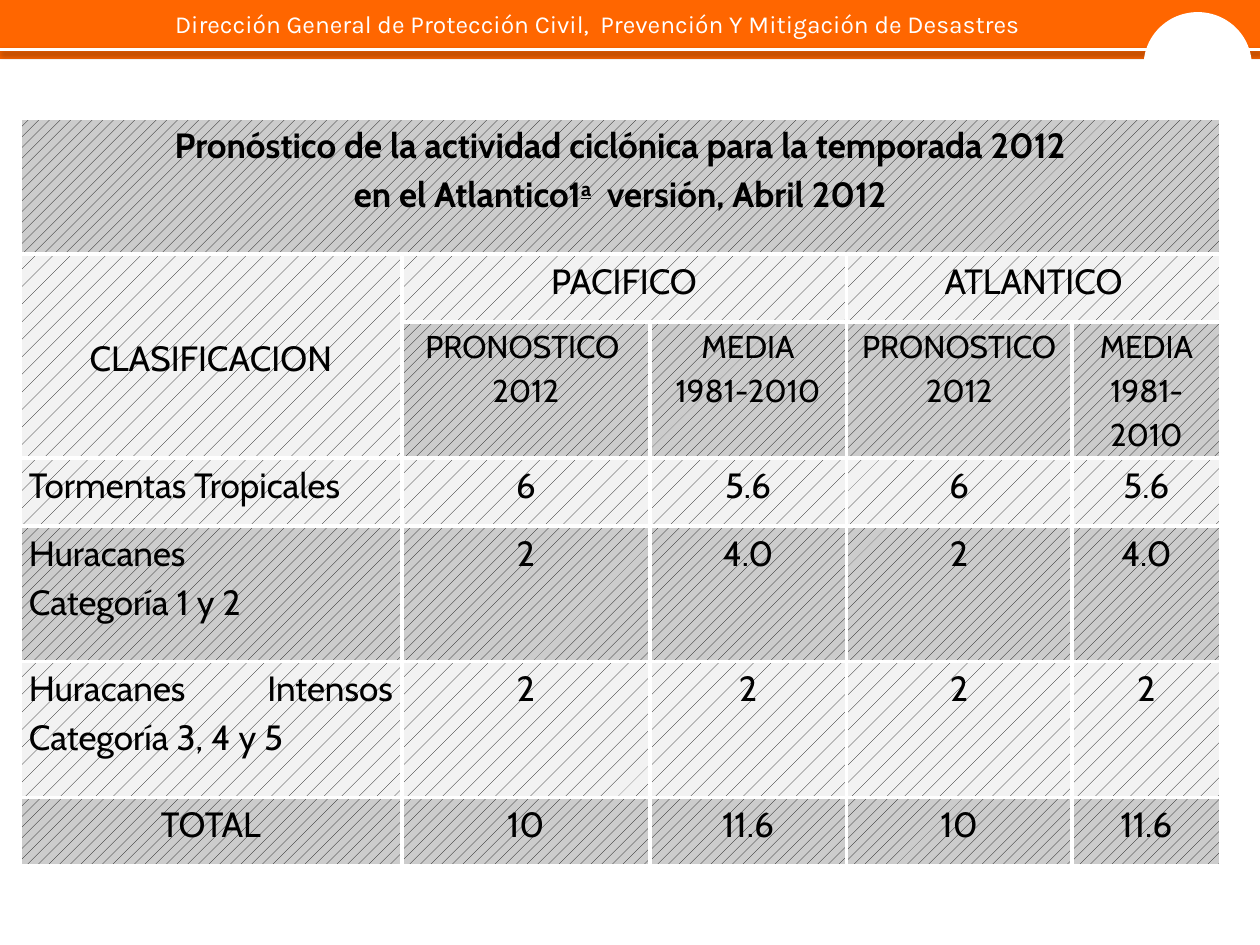
import pptx
import pptx.dml.color
import pptx.enum.dml
import pptx.enum.shapes
import pptx.enum.text
import pptx.oxml
import pptx.oxml.ns
import pptx.util

Cm = pptx.util.Cm
Pt = pptx.util.Pt
ALIGN = pptx.enum.text.PP_ALIGN
PATTERN = pptx.enum.dml.MSO_PATTERN
SHAPE = pptx.enum.shapes.MSO_SHAPE

HEADING = "Dirección General de Protección Civil,  Prevención Y Mitigación de Desastres"
TITLE = [
    "Pronóstico de la actividad ciclónica para la temporada 2012\ven el Atlantico1",
    "a",
    "  versión, Abril 2012",
]
ROWS = [
    [None] * 5,
    ["CLASIFICACION", "PACIFICO", None, "ATLANTICO", None],
    [None, "PRONOSTICO \n2012", "MEDIA\n1981-2010", "PRONOSTICO\n2012", "MEDIA\n1981-2010"],
    ["Tormentas Tropicales", "6", "5.6", "6", "5.6"],
    ["Huracanes \nCategoría 1 y 2", "2", "4.0", "2", "4.0"],
    ["Huracanes Intensos Categoría 3, 4 y 5", "2", "2", "2", "2"],
    ["TOTAL", "10", "11.6", "10", "11.6"],
]
COLUMN_WIDTHS = [7.7, 5, 3.96, 4.55, 3]
ROW_HEIGHTS = [2.74, 1.37, 2.74, 1.37, 2.74, 2.74, 1.37]
MERGES = [((0, 0), (0, 4)), ((1, 0), (2, 0)), ((1, 1), (1, 2)), ((1, 3), (1, 4))]
SUBHEADING_ROW = 2
JUSTIFIED_ROWS = (3, 4, 5)


def color(value):
    return pptx.dml.color.RGBColor.from_string(value)


def set_font(font, name, size, value, bold=False):
    font.name = name
    font.size = Pt(size)
    font.color.rgb = color(value)
    font.bold = bold


def add_plain_shape(slide, kind, box, fill):
    shape = slide.shapes.add_shape(kind, *map(Cm, box))
    shape.shadow.inherit = False
    shape.fill.solid()
    shape.fill.fore_color.rgb = color(fill)
    shape.line.fill.background()
    return shape


def add_shadow(connector):
    connector._element.spPr.append(pptx.oxml.parse_xml(
        f'<a:effectLst {pptx.oxml.ns.nsdecls("a")}>'
        f'<a:outerShdw blurRad="{Pt(3.1)}" dist="{Pt(1.6)}" dir="5400000" rotWithShape="0">'
        '<a:srgbClr val="000000"><a:alpha val="38000"/></a:srgbClr>'
        '</a:outerShdw></a:effectLst>'))


def add_header(slide, left, top, width, height):
    add_plain_shape(slide, SHAPE.RECTANGLE, (left, top, width, height), "FF6600")

    line_top = Cm(top + 1)
    rule = slide.shapes.add_connector(
        pptx.enum.shapes.MSO_CONNECTOR.STRAIGHT, Cm(left), line_top, Cm(left + width), line_top)
    rule.line.color.rgb = color("FFFFFF")
    rule.line.width = Pt(2)
    add_shadow(rule)

    heading = slide.shapes.add_textbox(Cm(left + 3.28), Cm(top + 0.05), Cm(22.63), Cm(0.84))
    frame = heading.text_frame
    frame.word_wrap = True
    frame.auto_size = pptx.enum.text.MSO_AUTO_SIZE.SHAPE_TO_FIT_TEXT
    paragraph = frame.paragraphs[0]
    paragraph.text = HEADING
    paragraph.alignment = ALIGN.JUSTIFY
    set_font(paragraph.font, "Karla", 14, "FFFFFF")

    emblem = add_plain_shape(
        slide, SHAPE.OVAL, (left + 23.09, top + 0.28, 2.11, 2.08), "FFFFFF")
    emblem.line.color.rgb = color("FFFFFF")
    emblem.line.width = Pt(2)


def add_borders(cell):
    properties = cell._tc.get_or_add_tcPr()
    for index, side in enumerate(("lnL", "lnR", "lnT", "lnB")):
        properties.insert(index, pptx.oxml.parse_xml(
            f'<a:{side} {pptx.oxml.ns.nsdecls("a")} w="{Pt(2.25)}">'
            f'<a:solidFill><a:srgbClr val="FFFFFF"/></a:solidFill></a:{side}>'))


def style_cell(cell, dark):
    cell.margin_left = cell.margin_right = Cm(0.18)
    cell.margin_top = cell.margin_bottom = 0
    cell.fill.patterned()
    cell.fill.pattern = PATTERN.PERCENT_20 if dark else PATTERN.PERCENT_5
    cell.fill.fore_color.rgb = color("000000")
    cell.fill.back_color.rgb = color("CCCCCC" if dark else "F2F2F2")
    add_borders(cell)


def style_paragraphs(cell, alignment, size, bold=False):
    for paragraph in cell.text_frame.paragraphs:
        paragraph.alignment = alignment
        paragraph.line_spacing = 1.15
        set_font(paragraph.font, "Cabin", size, "000000", bold)


def fill_title(cell):
    paragraph = cell.text_frame.paragraphs[0]
    before, ordinal, after = TITLE
    paragraph.text = before
    run = paragraph.add_run()
    run.text = ordinal
    run.font.underline = True
    run.font._element.set("baseline", "30000")
    paragraph.add_run().text = after
    style_paragraphs(cell, ALIGN.CENTER, 20, True)


def add_forecast_table(slide, left, top):
    frame = slide.shapes.add_table(
        len(ROWS), len(COLUMN_WIDTHS), Cm(left), Cm(top),
        Cm(sum(COLUMN_WIDTHS)), Cm(sum(ROW_HEIGHTS)))
    table = frame.table
    table.first_row = False
    table.horz_banding = False
    for column, width in zip(table.columns, COLUMN_WIDTHS):
        column.width = Cm(width)
    for row, height in zip(table.rows, ROW_HEIGHTS):
        row.height = Cm(height)
    for start, end in MERGES:
        table.cell(*start).merge(table.cell(*end))

    for row_index, texts in enumerate(ROWS):
        for column_index, text in enumerate(texts):
            cell = table.cell(row_index, column_index)
            style_cell(cell, row_index % 2 == 0)
            if text is None:
                continue
            cell.text = text
            justified = column_index == 0 and row_index in JUSTIFIED_ROWS
            style_paragraphs(
                cell, ALIGN.JUSTIFY if justified else ALIGN.CENTER,
                18 if row_index == SUBHEADING_ROW else 20)
    fill_title(table.cell(0, 0))
    table.cell(1, 0).vertical_anchor = pptx.enum.text.MSO_ANCHOR.MIDDLE


def main():
    presentation = pptx.Presentation()
    presentation.slide_width = Cm(25.4)
    presentation.slide_height = Cm(19.05)
    slide = presentation.slides.add_slide(presentation.slide_layouts[6])
    add_header(slide, 0, 0, 25.4, 1.19)
    add_forecast_table(slide, 0.4, 2.38)
    presentation.save("out.pptx")


if __name__ == "__main__":
    main()
